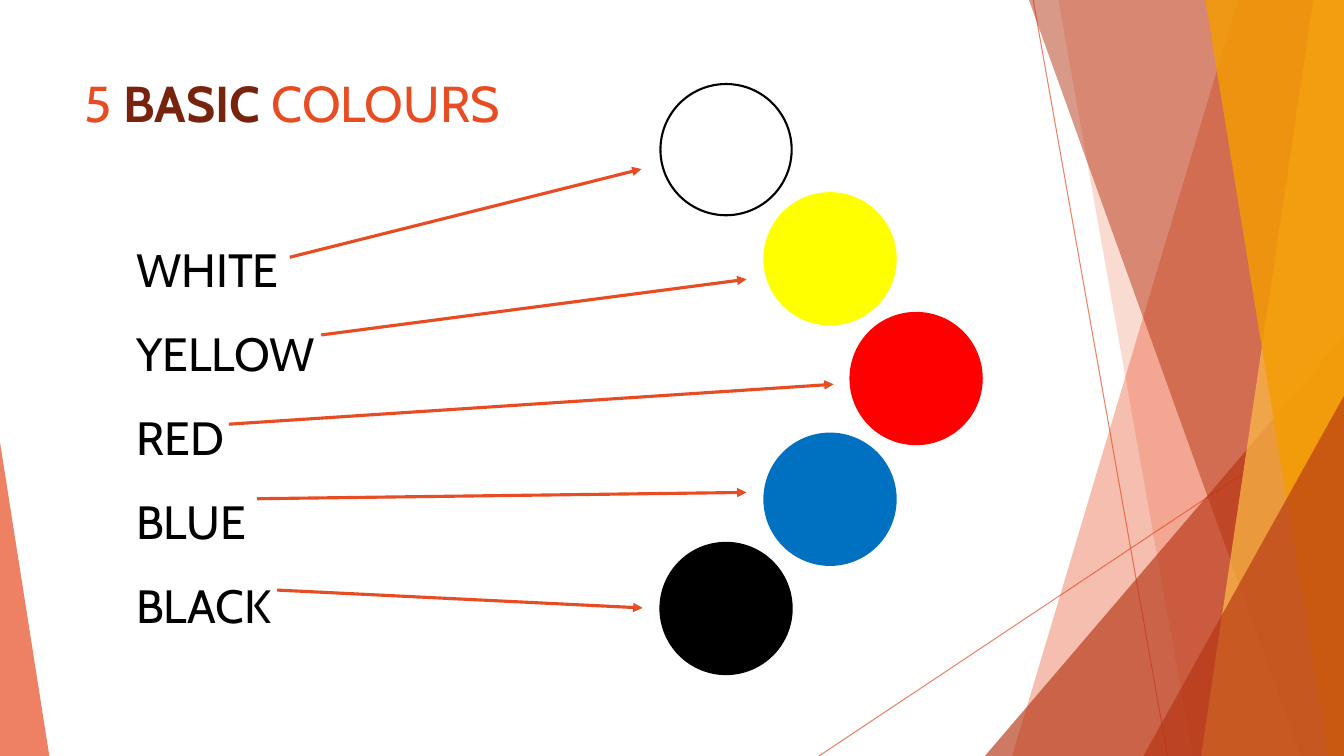
from dataclasses import dataclass

from lxml import etree
from pptx import Presentation
from pptx.dml.color import RGBColor
from pptx.enum.shapes import MSO_CONNECTOR, MSO_SHAPE
from pptx.enum.text import MSO_ANCHOR, MSO_AUTO_SIZE, PP_ALIGN
from pptx.oxml.ns import qn
from pptx.util import Pt

PX = 9525  # EMU in one px, 96 px to the inch
WIDTH, HEIGHT = 1280, 720
STRAIGHT = MSO_CONNECTOR.STRAIGHT
TRIANGLE, OVAL = MSO_SHAPE.ISOSCELES_TRIANGLE, MSO_SHAPE.OVAL
TOP, LEFT, NO_FIT = MSO_ANCHOR.TOP, PP_ALIGN.LEFT, MSO_AUTO_SIZE.NONE


@dataclass(frozen=True)
class Theme:
    font: str = "Cabin"
    accent: str = "E84C22"
    dark: str = "B53513"
    strong: str = "78230D"
    amber: str = "FFBD47"
    orange: str = "F49D00"
    text: str = "000000"
    title_size: float = 36
    list_size: float = 33.3
    hairline: float = 0.75
    outline: float = 1.5
    arrow: float = 2.25


THEME = Theme()
CIRCLE = 125

# Name, colour, outline, circle corner, arrow start, arrow end
COLOURS = [
    ("WHITE", "FFFFFF", "000000", (629, 80), (276, 245), (611, 161)),
    ("YELLOW", "FFFF00", "FFFF00", (728, 184), (306, 319), (711, 266)),
    ("RED", "FF0000", "FF0000", (810, 298), (218, 404), (794, 366)),
    ("BLUE", "0070C0", "0070C0", (728, 413), (245, 475), (711, 469)),
    ("BLACK", "000000", "000000", (629, 517), (264, 562), (612, 579)),
]


def rgb(colour):
    return RGBColor.from_string(colour)


def set_opacity(shape, percent):
    for colour in shape.element.iter(qn("a:srgbClr")):
        etree.SubElement(colour, qn("a:alpha"), val=str(percent * 1000))


def paint(shape, fill, outline=None, opacity=100):
    shape.shadow.inherit = False
    shape.fill.solid()
    shape.fill.fore_color.rgb = rgb(fill)
    if outline:
        shape.line.color.rgb = rgb(outline)
        shape.line.width = Pt(THEME.outline)
    else:
        shape.line.fill.background()
    if opacity < 100:
        set_opacity(shape, opacity)


def add_preset(page, kind, left, top, width, height):
    return page.shapes.add_shape(kind, left * PX, top * PX, width * PX, height * PX)


def add_triangle(page, left, top, width, apex, fill, opacity):
    """Triangle standing on the bottom edge; apex runs from 0 (left) to 1 (right)."""
    shape = add_preset(page, TRIANGLE, left, top, width, HEIGHT - top)
    shape.adjustments[0] = apex
    paint(shape, fill, opacity=opacity)


def add_band(page, top_x, bottom_x, fill, opacity):
    """Full-height band from a slanted left edge to the right side."""
    builder = page.shapes.build_freeform(top_x, 0, scale=PX)
    builder.add_line_segments([(WIDTH, 0), (WIDTH, HEIGHT), (bottom_x, HEIGHT)], close=True)
    paint(builder.convert_to_shape(), fill, opacity=opacity)


def add_line(page, start, end, weight, opacity=100, arrow=False):
    ends = [value * PX for value in (*start, *end)]
    line = page.shapes.add_connector(STRAIGHT, *ends)
    line.line.color.rgb = rgb(THEME.accent)
    line.line.width = Pt(weight)
    properties = line.element.spPr
    if arrow:
        etree.SubElement(properties.find(qn("a:ln")), qn("a:tailEnd"), type="triangle")
    if opacity < 100:
        set_opacity(line, opacity)
    etree.SubElement(properties, qn("a:effectLst"))


def place(box, left, top, width, height):
    """Move a placeholder and bring it in front of what is drawn so far."""
    box.left, box.top, box.width, box.height = (v * PX for v in (left, top, width, height))
    box.element.getparent().append(box.element)
    frame = box.text_frame
    frame.word_wrap = True
    frame.auto_size = NO_FIT
    frame.vertical_anchor = TOP
    return frame


def add_span(para, text, size, colour, bold=False):
    span = para.add_run()
    span.text = text
    span.font.name = THEME.font
    span.font.size = Pt(size)
    span.font.bold = bold
    span.font.color.rgb = rgb(colour)


def add_backdrop(page):
    add_line(page, (984, 0), (1112, HEIGHT), THEME.hairline, opacity=70)
    add_line(page, (WIDTH, 387), (780, HEIGHT), THEME.hairline, opacity=70)
    add_band(page, 1179, 964, THEME.accent, 36)
    add_band(page, 1008, 1136, THEME.accent, 20)
    add_triangle(page, 938, 320, 342, 1, THEME.dark, 66)
    add_band(page, 980, 1239, THEME.dark, 50)
    add_band(page, 1251, 1144, THEME.amber, 70)
    add_band(page, 1148, 1265, THEME.orange, 80)
    add_triangle(page, 1089, 377, 191, 1, THEME.dark, 66)
    add_triangle(page, 0, 421, 47, 0, THEME.accent, 70)


def fill_title(box):
    para = place(box, 71, 64, 902, 138).paragraphs[0]
    para.alignment = LEFT
    add_span(para, "5 ", THEME.title_size, THEME.accent)
    add_span(para, "BASIC", THEME.title_size, THEME.strong, bold=True)
    add_span(para, " COLOURS", THEME.title_size, THEME.accent)


def fill_list(box, names):
    frame = place(box, 120, 198, 317, 397)
    for index, name in enumerate(names):
        para = frame.add_paragraph() if index else frame.paragraphs[0]
        para.alignment = LEFT
        para.line_spacing = 1.5
        para.space_before = para.space_after = Pt(0)
        # No bullet and no hanging indent
        properties = para._p.get_or_add_pPr()
        properties.set("marL", "0")
        properties.set("indent", "0")
        etree.SubElement(properties, qn("a:buNone"))
        add_span(para, name, THEME.list_size, THEME.text)


def main():
    deck = Presentation()
    deck.slide_width, deck.slide_height = WIDTH * PX, HEIGHT * PX
    page = deck.slides.add_slide(deck.slide_layouts[1])

    add_backdrop(page)

    # Title and colour names
    fill_title(page.shapes.title)
    fill_list(page.placeholders[1], [row[0] for row in COLOURS])

    # Arrows, then the circles they point to
    for *_, start, end in COLOURS:
        add_line(page, start, end, THEME.arrow, arrow=True)
    for _, fill, outline, corner, *_ in COLOURS:
        paint(add_preset(page, OVAL, *corner, CIRCLE, CIRCLE), fill, outline)

    deck.save("out.pptx")


if __name__ == "__main__":
    main()
